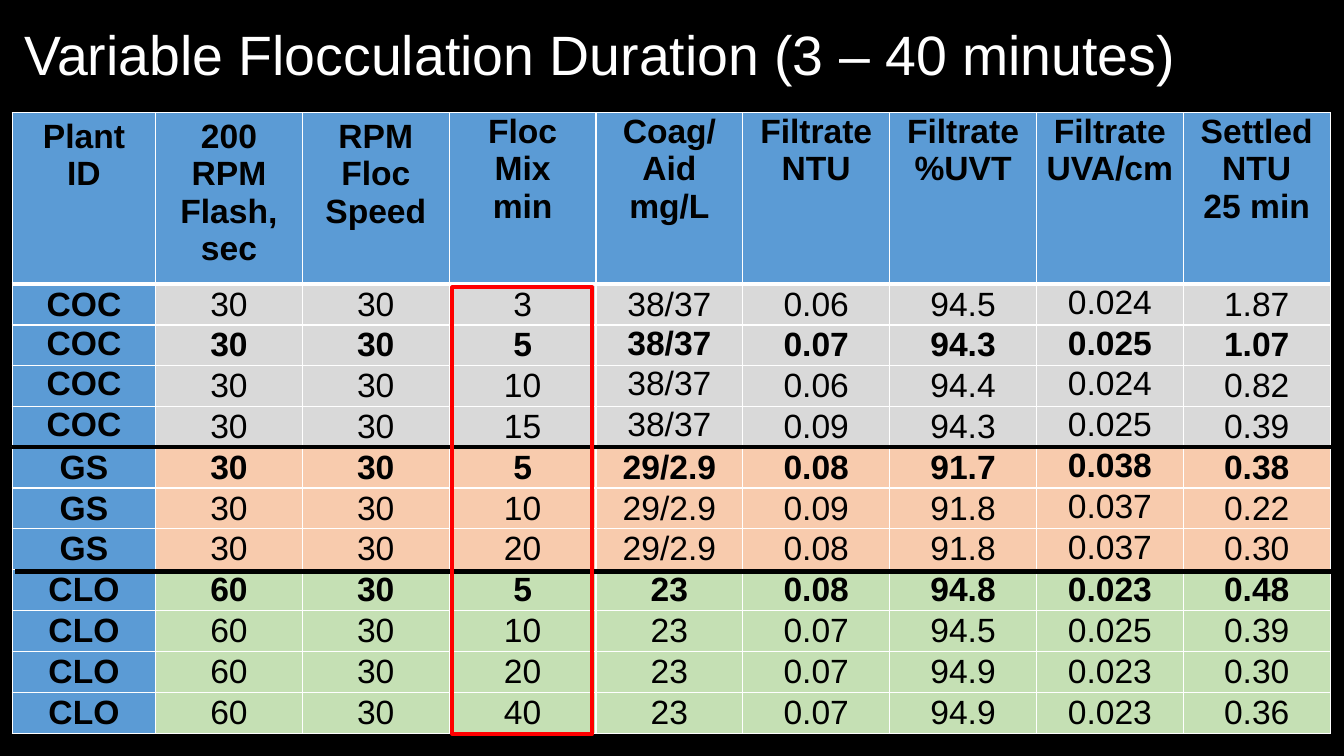
from lxml.etree import SubElement
from pptx import Presentation
from pptx.dml.color import RGBColor
from pptx.enum.shapes import MSO_CONNECTOR, MSO_SHAPE
from pptx.enum.text import MSO_ANCHOR, PP_ALIGN
from pptx.oxml.ns import qn
from pptx.util import Cm, Pt

BLACK, WHITE, RED = "000000", "FFFFFF", "FF0000"
HEADER_BLUE = "5B9BD5"
PLANT_FILLS = {"COC": "D9D9D9", "GS": "F8CBAD", "CLO": "C5E0B4"}

HEADINGS = ["Plant ID", "200 RPM Flash, sec", "RPM\nFloc Speed", "Floc\nMix\nmin",
            "Coag/\nAid\nmg/L", "Filtrate\nNTU", "Filtrate\n%UVT",
            "Filtrate\nUVA/cm", "Settled\nNTU\n25 min"]
RUNS = [
    ["COC", "30", "30", "3", "38/37", "0.06", "94.5", "0.024", "1.87"],
    ["COC", "30", "30", "5", "38/37", "0.07", "94.3", "0.025", "1.07"],
    ["COC", "30", "30", "10", "38/37", "0.06", "94.4", "0.024", "0.82"],
    ["COC", "30", "30", "15", "38/37", "0.09", "94.3", "0.025", "0.39"],
    ["GS", "30", "30", "5", "29/2.9", "0.08", "91.7", "0.038", "0.38"],
    ["GS", "30", "30", "10", "29/2.9", "0.09", "91.8", "0.037", "0.22"],
    ["GS", "30", "30", "20", "29/2.9", "0.08", "91.8", "0.037", "0.30"],
    ["CLO", "60", "30", "5", "23", "0.08", "94.8", "0.023", "0.48"],
    ["CLO", "60", "30", "10", "23", "0.07", "94.5", "0.025", "0.39"],
    ["CLO", "60", "30", "20", "23", "0.07", "94.9", "0.023", "0.30"],
    ["CLO", "60", "30", "40", "23", "0.07", "94.9", "0.023", "0.36"],
]
PLANT, MIX, COAG, UVA = 0, 3, 4, 7
BOLD_MIX = "5"
COLUMN_WIDTHS = [3.61] + [3.7] * 8
ROW_HEIGHTS = [4.03, 1.03, 0.95] + [1.03] * 9


def rgb(hex_color):
    return RGBColor.from_string(hex_color)


def is_top_aligned(row, column):
    if row == 0:
        return True
    if column == UVA:
        return row <= 7
    return column in (PLANT, COAG) and 2 <= row <= 4 


class SlideBuilder:
    font_name = "Arial"

    def __init__(self, presentation):
        self.slide = presentation.slides.add_slide(presentation.slide_layouts[6])
        background = self.slide.background.fill
        background.solid()
        background.fore_color.rgb = rgb(BLACK)

    def style(self, paragraph, size, color, bold=False):
        font = paragraph.font
        font.name, font.size, font.bold = self.font_name, Pt(size), bold
        font.color.rgb = rgb(color)

    def title(self, text, left, top, width, height):
        frame = self.slide.shapes.add_textbox(
            Cm(left), Cm(top), Cm(width), Cm(height)).text_frame
        frame.word_wrap = True
        frame.vertical_anchor = MSO_ANCHOR.MIDDLE
        frame.text = text
        heading = frame.paragraphs[0]
        heading.line_spacing = 0.9
        self.style(heading, 39.6, WHITE)

    def results_table(self, left, top):
        rows = [HEADINGS] + RUNS
        table = self.slide.shapes.add_table(
            len(rows), len(HEADINGS), Cm(left), Cm(top),
            Cm(sum(COLUMN_WIDTHS)), Cm(sum(ROW_HEIGHTS))).table
        table.first_row = table.horz_banding = False
        for column, width in zip(table.columns, COLUMN_WIDTHS):
            column.width = Cm(width)
        for row, height in zip(table.rows, ROW_HEIGHTS):
            row.height = Cm(height)
        for r, values in enumerate(rows):
            for c, value in enumerate(values):
                self.result_cell(table.cell(r, c), r, c, value, values)

    def result_cell(self, cell, row, column, value, values):
        is_heading = row == 0 or column == PLANT
        self.cell_borders(cell, row)
        cell.fill.solid()
        cell.fill.fore_color.rgb = rgb(
            HEADER_BLUE if is_heading else PLANT_FILLS[values[PLANT]])
        if row > 0 or column >= MIX:
            cell.margin_left = cell.margin_right = Cm(0.18)
            cell.margin_top = cell.margin_bottom = 0
        cell.vertical_anchor = (MSO_ANCHOR.TOP if is_top_aligned(row, column)
                                else MSO_ANCHOR.MIDDLE)
        cell.text = value
        for paragraph in cell.text_frame.paragraphs:
            paragraph.alignment = PP_ALIGN.CENTER
            self.style(paragraph, 24, BLACK, is_heading or values[MIX] == BOLD_MIX)

    def cell_borders(self, cell, row):
        """Draw white edges, with a heavy one between the heading and the data."""
        widths = {"a:lnL": 1, "a:lnR": 1,
                  "a:lnT": 3 if row == 1 else 1, "a:lnB": 3 if row == 0 else 1}
        properties = cell._tc.get_or_add_tcPr()
        for tag, width in widths.items():
            edge = SubElement(properties, qn(tag), w=str(Pt(width)))
            fill = SubElement(edge, qn("a:solidFill"))
            SubElement(fill, qn("a:srgbClr"), val=WHITE)

    def divider(self, left, y, width):
        line = self.slide.shapes.add_connector(
            MSO_CONNECTOR.STRAIGHT, Cm(left), Cm(y), Cm(left + width), Cm(y))
        line.line.color.rgb = rgb(BLACK)
        line.line.width = Pt(3)
        SubElement(line._element.spPr, qn("a:effectLst"))

    def highlight(self, left, top, width, height):
        box = self.slide.shapes.add_shape(
            MSO_SHAPE.RECTANGLE, Cm(left), Cm(top), Cm(width), Cm(height))
        box.shadow.inherit = False
        box.fill.background()
        box.line.color.rgb = rgb(RED)
        box.line.width = Pt(2.75)


def main():
    presentation = Presentation()
    presentation.slide_width, presentation.slide_height = Cm(33.87), Cm(19.05)
    builder = SlideBuilder(presentation)
    builder.title("Variable Flocculation Duration (3 – 40 minutes)", 0.36, 0.28, 31.19, 2.36)
    builder.results_table(0.31, 2.84)
    builder.divider(0.3, 11.26, 33.27)
    builder.divider(0.38, 14.4, 33.27)
    builder.highlight(11.4, 7.24, 3.53, 11.25)
    presentation.save("out.pptx")


if __name__ == "__main__":
    main()
